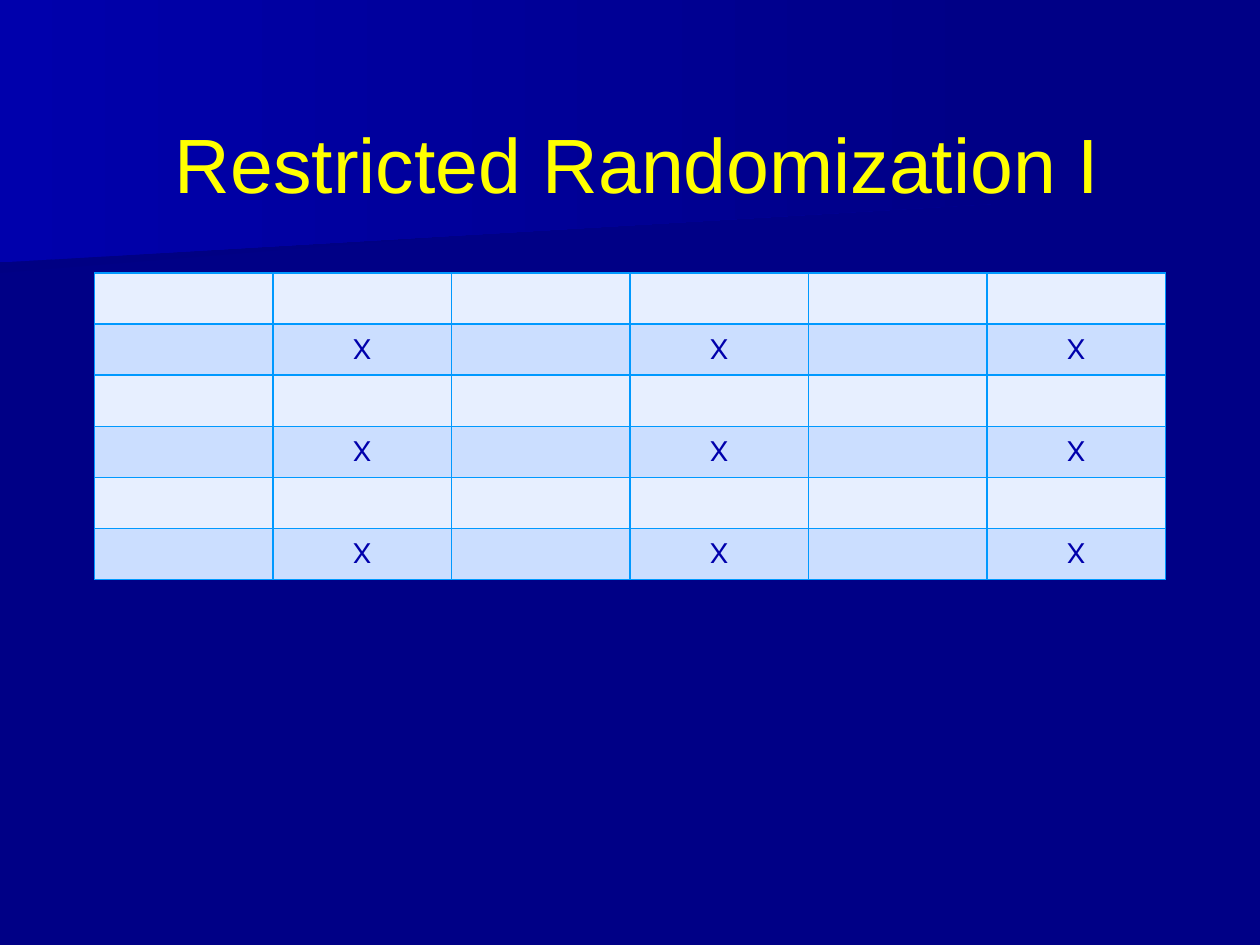
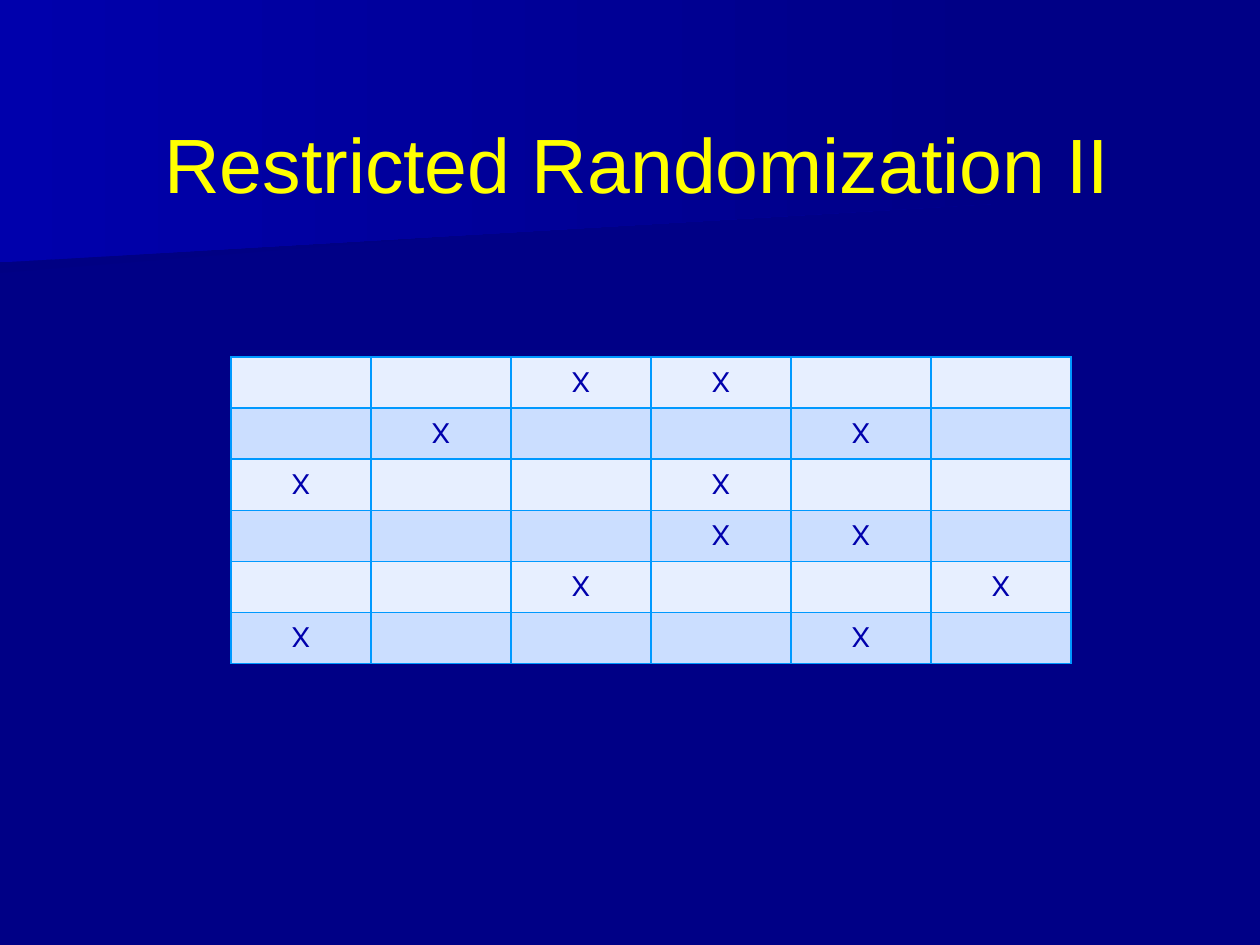
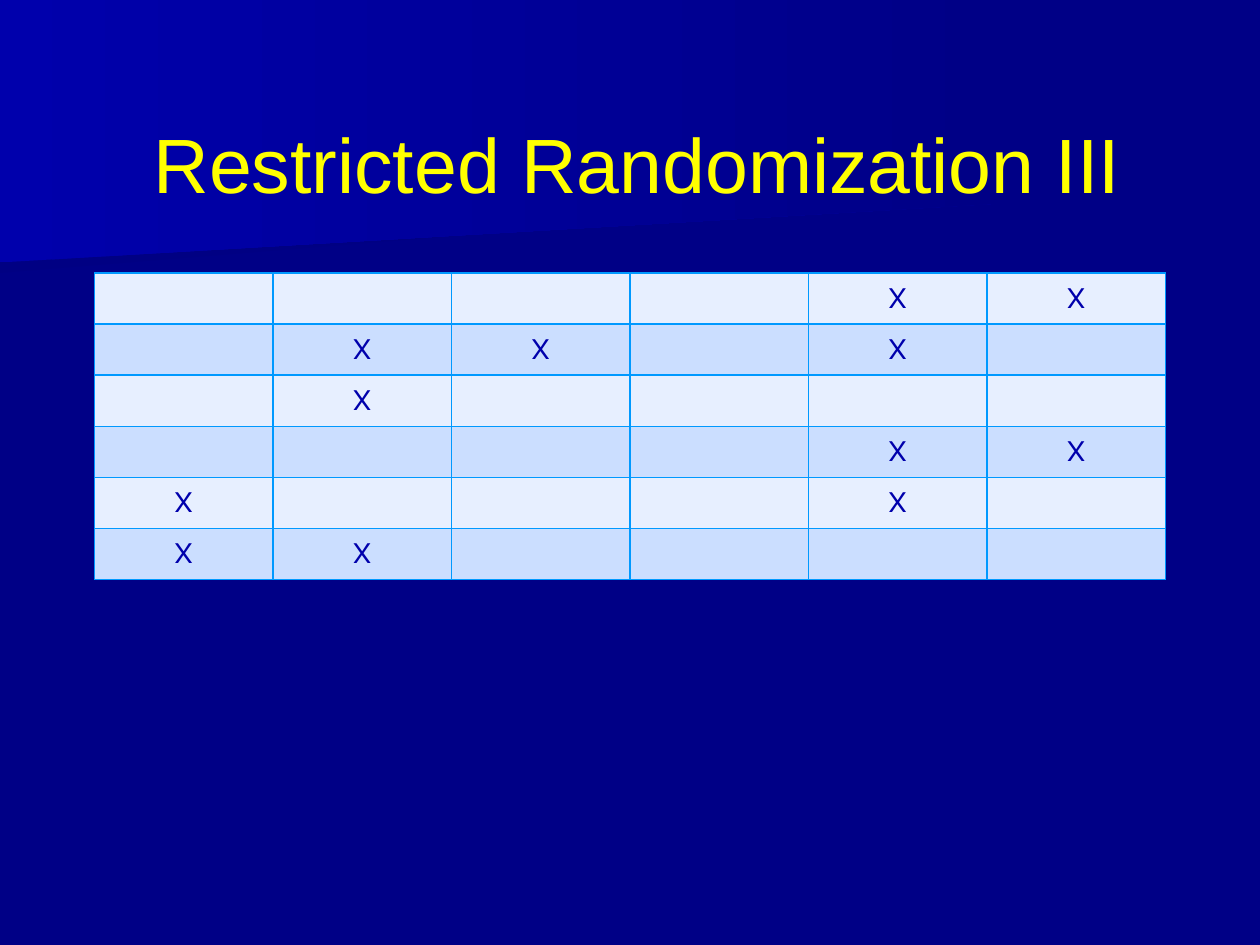
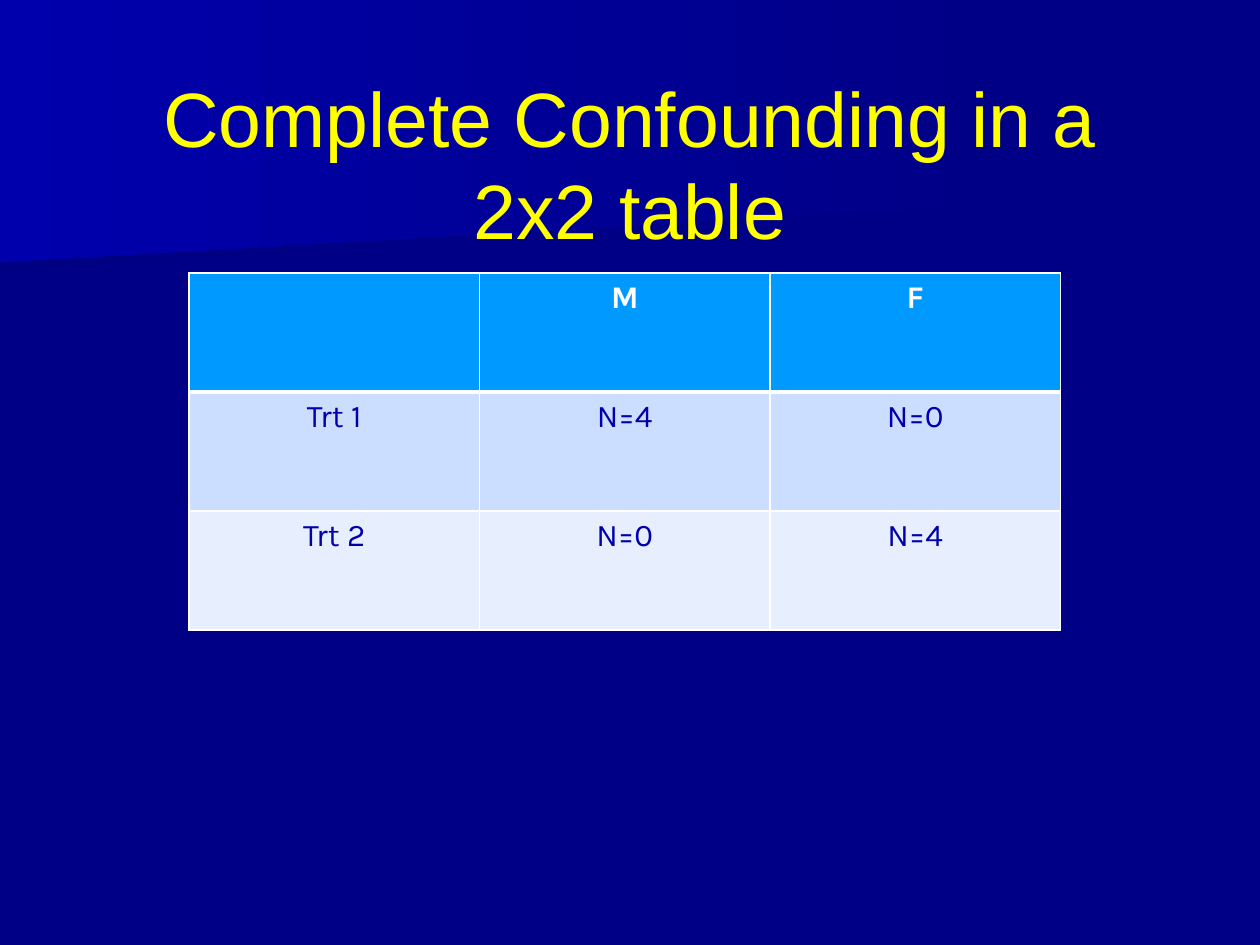
"""Build four slides on restricted randomization and confounding."""
from lxml import etree
from pptx import Presentation
from pptx import util as u
from pptx.dml.color import RGBColor
from pptx.enum import text
from pptx.oxml.ns import qn

COLUMNS, ROWS = 120, 90
NAVY, DEEP, ROYAL = "000086", "000083", "0000AC"
YELLOW, WHITE, AZURE = "FFFF00", "FFFFFF", "0099FF"
PALE, LIGHT = "E7EFFF", "CBDEFF"
UPPER_BAND = [(95, 19.4), (0, 25), (0, 0), (95, 0)]
LOWER_BAND = [(93.4, 18.4), (0, 26), (0, 12.1), (93.5, 12.1), (93.4, 15.4)]


def color(code):
    return RGBColor.from_string(code)


def write(frame, content, size=18, font="Karla", ink=ROYAL, bold=False):
    frame.text = content
    paragraph = frame.paragraphs[0]
    paragraph.alignment = text.PP_ALIGN.CENTER
    style = paragraph.runs[0].font
    style.size, style.name, style.bold = u.Pt(size), font, bold
    style.color.rgb = color(ink)


def border(cell, **sides):
    properties = cell._tc.get_or_add_tcPr()
    for place, side in enumerate("LRTB"):
        ink, width = sides[side]
        edge = etree.Element(qn("a:ln" + side), w=str(u.Pt(width)))
        fill = etree.SubElement(edge, qn("a:solidFill"))
        etree.SubElement(fill, qn("a:srgbClr"), val=ink)
        properties.insert(place, edge)


class Deck:
    def __init__(self):
        self.prs = Presentation()
        self.prs.slide_width, self.prs.slide_height = u.Inches(10), u.Inches(7.5)
        self.slide = None
        backdrop = self.prs.slide_master.background.fill
        backdrop.solid()
        backdrop.fore_color.rgb = color(NAVY)

    def x(self, columns):
        return round(self.prs.slide_width * columns / COLUMNS)

    def y(self, rows):
        return round(self.prs.slide_height * rows / ROWS)

    def place(self, left, top, width, height):
        return self.x(left), self.y(top), self.x(width), self.y(height)

    def start(self, heading, indent=0):
        self.slide = self.prs.slides.add_slide(self.prs.slide_layouts[5])
        title = self.slide.shapes.title
        title.left, title.top, title.width, title.height = self.place(9, 8, 102, 15)
        frame = title.text_frame
        frame.auto_size = text.MSO_AUTO_SIZE.NONE
        frame.vertical_anchor = text.MSO_ANCHOR.MIDDLE
        frame.margin_left = u.Inches(0.1 + indent)
        write(frame, heading, size=44, font="Arial", ink=YELLOW)

    def master_band(self, outline, start_ink, order):
        points = [(self.x(column), self.y(row)) for column, row in outline]
        builder = self.slide.shapes.build_freeform(*points[0])
        builder.add_line_segments(points[1:], close=True)
        band = builder.convert_to_shape()
        band.shadow.inherit = False
        band.line.fill.background()
        band.fill.gradient()
        band.fill.gradient_angle = 0
        for stop, ink in zip(band.fill.gradient_stops, (start_ink, NAVY)):
            stop.color.rgb = color(ink)
        band._element.nvSpPr.cNvPr.set("id", str(100 + order))
        self.prs.slide_master.shapes._spTree.insert(2 + order, band._element)

    def table(self, grid, area):
        holder = self.slide.shapes.add_table(len(grid), len(grid[0]), *self.place(*area))
        table = holder.table
        table.first_row = table.horz_banding = False
        for r, row in enumerate(grid):
            for c, content in enumerate(row):
                yield r, table.cell(r, c), content

    def cell(self, cell, content, fill, **style):
        cell.fill.solid()
        cell.fill.fore_color.rgb = color(fill)
        if content.strip():
            write(cell.text_frame, content, **style)

    def assignment(self, grid, area):
        line = (AZURE, 1)
        for r, cell, mark in self.table(grid, area):
            self.cell(cell, mark, LIGHT if r % 2 else PALE)
            border(cell, L=line, R=line, T=line, B=line)

    def counts(self, grid, area):
        thin, thick = (WHITE, 1), (WHITE, 3)
        for r, cell, content in self.table(grid, area):
            header = r == 0
            self.cell(cell, content, (AZURE, LIGHT, PALE)[r],
                      ink=WHITE if header else ROYAL, bold=header)
            border(cell, L=thin, R=thin, T=thick if r == 1 else thin,
                   B=thick if header else thin)


WIDE, NARROW = (9, 26, 102, 29.2), (22, 34, 80, 29.2)
RANDOMIZATIONS = [
    ("I", WIDE, ["      ", " X X X"] * 3),
    ("II", NARROW, ["  XX  ", " X  X ", "X  X  ", "   XX ", "  X  X", "X   X "]),
    ("III", WIDE, ["    XX", " XX X ", " X    ", "    XX", "X   X ", "XX    "]),
]
CONFOUNDING = [("", "M", "F"), ("Trt 1", "N=4", "N=0"), ("Trt 2", "N=0", "N=4")]


def main():
    deck = Deck()
    for numeral, area, grid in RANDOMIZATIONS:
        deck.start("Restricted Randomization " + numeral, indent=0.12)
        deck.assignment(grid, area)
    deck.start("Complete Confounding in a 2x2 table")
    deck.counts(CONFOUNDING, (18, 26, 83, 34))
    deck.master_band(LOWER_BAND, DEEP, 0)
    deck.master_band(UPPER_BAND, ROYAL, 1)
    deck.prs.save("out.pptx")


if __name__ == "__main__":
    main()
